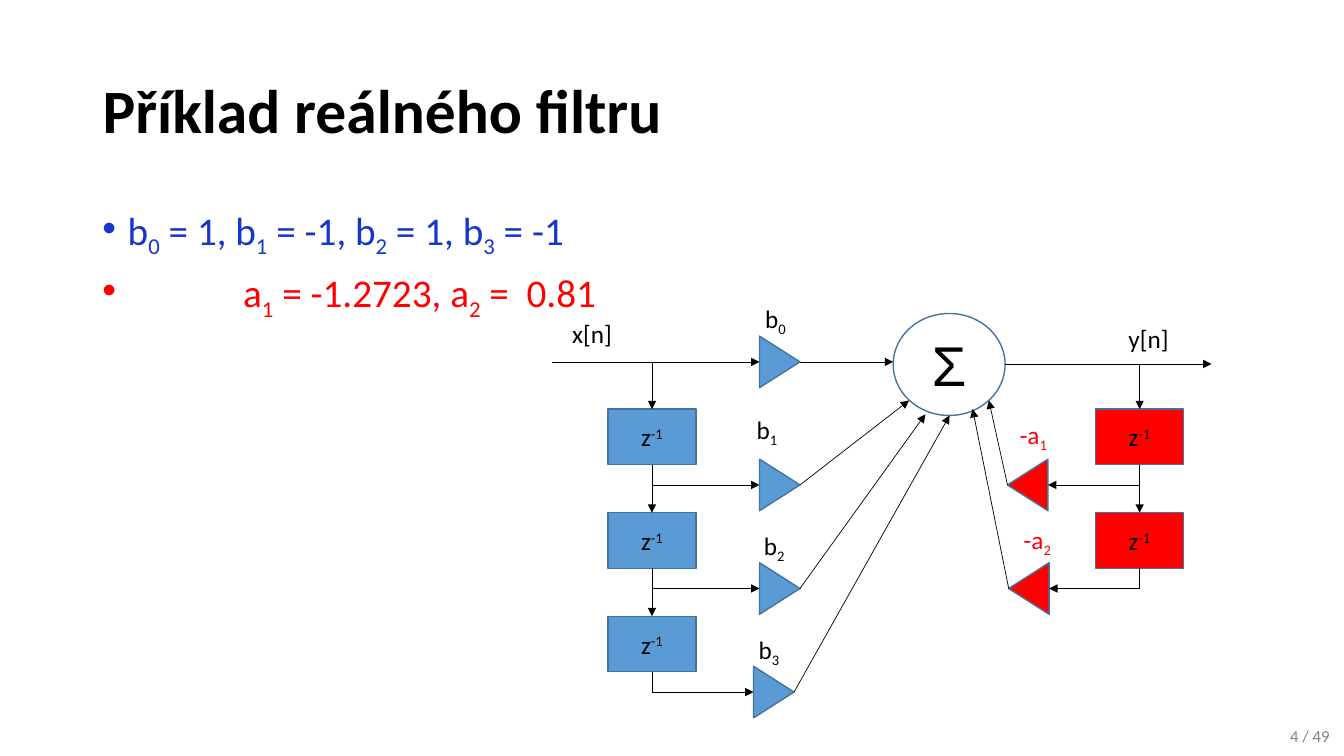
from lxml import etree
from pptx import Presentation
from pptx.dml.color import RGBColor
from pptx.enum.shapes import MSO_CONNECTOR, MSO_SHAPE
from pptx.enum.text import MSO_ANCHOR, PP_ALIGN
from pptx.oxml.ns import qn
from pptx.util import Cm, Pt

RECT, OVAL = MSO_SHAPE.RECTANGLE, MSO_SHAPE.OVAL
WEDGE = MSO_SHAPE.FLOWCHART_EXTRACT
STRAIGHT = MSO_CONNECTOR.STRAIGHT
MIDDLE = MSO_ANCHOR.MIDDLE
LEFT, CENTER, RIGHT = PP_ALIGN.LEFT, PP_ALIGN.CENTER, PP_ALIGN.RIGHT
TOP, BOTTOM = 0, 2
BLACK, GREY, RED = "000000", "808080", "FF0000"
INK, BLUE, EDGE = "1436CA", "5B9BD5", "43739E"

STEP = 2.61                  # distance between rows of the filter
BOX_W, BOX_H = 2.22, 1.4     # delay box
WEDGE_W, WEDGE_H = 1.02, 1.3  # gain triangle as seen
BOX_Y, GAIN_Y, IN_Y, OUT_Y = 2.79, 4.7, 1.6, 1.65


def color(code):
    return RGBColor.from_string(code)


def apply(item, values):
    for name, value in values.items():
        setattr(item, name, value)


def write(para, text, size, code, base=-25, **font):
    """Fill a paragraph; every second part between bars is raised or lowered."""
    for i, part in enumerate(text.split("|")):
        if not part:
            continue
        run = para.add_run()
        run.text = part
        apply(run.font, {"name": "Calibri", "size": Pt(size), **font})
        run.font.color.rgb = color(code)
        if i % 2:
            run.font._element.set("baseline", str(base * 1000))


def label(slide, x, y, w, text, size=18, code=BLACK, align=LEFT, h=1.02):
    frame = slide.shapes.add_textbox(Cm(x), Cm(y), Cm(w), Cm(h)).text_frame
    frame.word_wrap = True
    frame.paragraphs[0].alignment = align
    write(frame.paragraphs[0], text, size, code)


def block(slide, kind, x, y, w, h, fill=None):
    shape = slide.shapes.add_shape(kind, Cm(x), Cm(y), Cm(w), Cm(h))
    shape.shadow.inherit = False
    if fill:
        shape.fill.solid()
        shape.fill.fore_color.rgb = color(fill)
    else:
        shape.fill.background()
    shape.line.color.rgb = color(EDGE)
    shape.line.width = Pt(1)
    shape.text_frame.vertical_anchor = MIDDLE
    shape.text_frame.paragraphs[0].alignment = CENTER
    return shape


def line(slide, start, end, first=None, last=None, arrow=True):
    """Draw a line, joined to the bottom of first and the top of last."""
    link = slide.shapes.add_connector(STRAIGHT, *map(Cm, start + end))
    if first:
        link.begin_connect(first, BOTTOM)
    if last:
        link.end_connect(last, TOP)
    link.line.color.rgb = color(BLACK)
    link.line.width = Pt(0.5)
    if arrow:
        etree.SubElement(link.line._get_or_add_ln(), qn("a:tailEnd"), type="triangle")
    etree.SubElement(link._element.spPr, qn("a:effectLst"))


def gain(slide, x, y, fill, turn):
    """Place a triangle with its left edge at x and its middle at y."""
    shape = block(slide, WEDGE, x + (WEDGE_W - WEDGE_H) / 2, y - WEDGE_W / 2,
                  WEDGE_H, WEDGE_W, fill)
    shape.rotation = turn


def delays(slide, x, y, top, count, fill):
    """Stack delay boxes fed from above, with a stub under the last one."""
    mid, prior = x + BOX_W / 2, None
    for i in range(count):
        level = y + BOX_Y + i * STEP
        box = block(slide, RECT, x, level, BOX_W, BOX_H, fill)
        write(box.text_frame.paragraphs[0], "z|-1", 18, BLACK, 30)
        line(slide, (mid, top), (mid, level), prior, box)
        prior = box
    end = y + GAIN_Y + (count - 1) * STEP
    line(slide, (mid, level + BOX_H), (mid, end), prior, arrow=False)


def branch(slide, x, y, side, taps, fill, code):
    """Draw gains row by row; side is 1 when the signal runs to the right."""
    for i, (mid, left, tag, text, w, goal) in enumerate(taps):
        row = y + GAIN_Y + i * STEP
        ends = [x + left, x + left + WEDGE_W][::side]
        gain(slide, x + left, row, fill, 90 * side % 360)
        label(slide, x + tag[0], y + tag[1], w, text, code=code)
        line(slide, (x + mid, row), (ends[0], row))
        line(slide, (ends[1], row), (x + goal[0], y + goal[1]))


def diagram(slide, x, y):
    total = block(slide, OVAL, x + 8.59, y + 0.38, 2.82, 2.57)
    write(total.text_frame.paragraphs[0], "Σ", 40, BLACK, name="Arial")
    gain(slide, x + 5.22, y + IN_Y, BLUE, 90)
    for start, end, level in ((0, 5.22, IN_Y), (6.24, 8.59, IN_Y),
                              (11.41, 16.61, OUT_Y)):
        line(slide, (x + start, y + level), (x + end, y + level))
    for left, top, w, text in ((0.25, 0.38, 2.34, "x[n]"),
                               (14.27, 0.51, 2.34, "y[n]"),
                               (5.11, 0, 1.14, "b|0")):
        label(slide, x + left, y + top, w, text)
    delays(slide, x + 1.4, y, y + IN_Y, 3, BLUE)
    delays(slide, x + 13.69, y, y + OUT_Y, 2, RED)
    branch(slide, x, y, 1, (
        (2.51, 5.22, (4.9, 2.79), "b|1", 1.14, (8.99, 2.57)),
        (2.51, 5.22, (5.08, 5.72), "b|2", 1.14, (9.4, 2.92)),
        (2.51, 5.07, (4.95, 8.33), "b|3", 1.14, (10.01, 2.95))), BLUE, BLACK)
    branch(slide, x, y, -1, (
        (14.8, 11.47, (11.53, 2.92), "-a|1", 1.4, (11, 2.57)),
        (14.8, 11.5, (11.63, 5.56), "-a|2", 1.4, (10.59, 2.79))), RED, RED)


def heading(slide, x, y, w, h):
    title = slide.shapes.title
    apply(title, {"left": Cm(x), "top": Cm(y), "width": Cm(w), "height": Cm(h)})
    title.text_frame.vertical_anchor = MIDDLE
    para = title.text_frame.paragraphs[0]
    apply(para, {"alignment": LEFT, "line_spacing": 0.9})
    write(para, "Příklad reálného filtru", 44, BLACK, bold=True)


def values(slide, x, y, w, h):
    frame = slide.shapes.add_textbox(Cm(x), Cm(y), Cm(w), Cm(h)).text_frame
    frame.word_wrap = True
    rows = (("b|0| = 1, b|1| = -1, b|2| = 1, b|3| = -1", INK, 0.64),
            ("a|1| = -1.2723, a|2| =  0.81", RED, 3.55))
    for i, (text, code, indent) in enumerate(rows):
        para = frame.add_paragraph() if i else frame.paragraphs[0]
        apply(para, {"line_spacing": 0.9, "space_before": Pt(10)})
        props = para._p.get_or_add_pPr()
        props.set("marL", str(Cm(indent)))
        props.set("indent", str(-Cm(indent)))
        etree.SubElement(props, qn("a:buFont"), typeface="Arial")
        etree.SubElement(props, qn("a:buChar"), char="•")
        write(para, text, 28, code)


def main():
    deck = Presentation()
    apply(deck, {"slide_width": Cm(33.87), "slide_height": Cm(19.05)})
    slide = deck.slides.add_slide(deck.slide_layouts[5])
    heading(slide, 2.33, 1.02, 29.21, 3.68)
    values(slide, 2.33, 5.08, 29.21, 12.09)
    diagram(slide, 13.92, 7.52)
    label(slide, 31.55, 18.16, 2.21, "4 / 49", 12, GREY, RIGHT, 0.84)
    deck.save("out.pptx")


if __name__ == "__main__":
    main()
